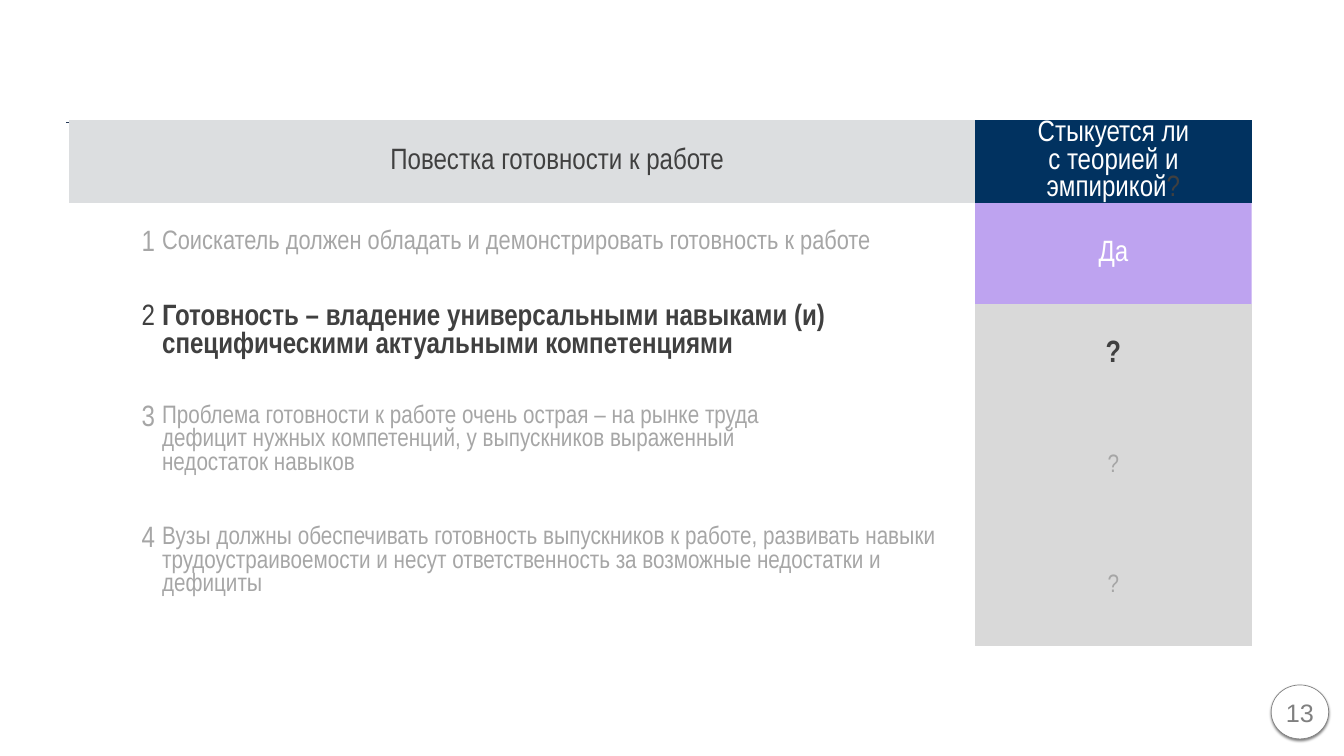
"""Build the agenda slide comparing work-readiness claims with theory and evidence."""
import pptx
import pptx.dml.color
import pptx.enum.shapes
import pptx.enum.text
import pptx.oxml.ns
import pptx.util
from lxml import etree
from pptx.util import Cm

RGBColor = pptx.dml.color.RGBColor
ALIGN = pptx.enum.text.PP_ALIGN
ANCHOR = pptx.enum.text.MSO_ANCHOR
qn = pptx.oxml.ns.qn

WHITE = RGBColor(0xFF, 0xFF, 0xFF)
NAVY = RGBColor(0x01, 0x32, 0x60)
RULE = RGBColor(0x25, 0x39, 0x57)
SILVER = RGBColor(0xDC, 0xDE, 0xE0)
VERDICT_GREY = RGBColor(0xD9, 0xD9, 0xD9)
PURPLE = RGBColor(0x94, 0x67, 0xE6)
DARK = RGBColor(0x40, 0x40, 0x40)
MUTED = RGBColor(0xA6, 0xA6, 0xA6)
BADGE_GREY = RGBColor(0x80, 0x80, 0x80)

NO_STYLE = "{2D5ABB26-0587-4C30-8999-92F81FD0307C}"
COLUMN_WIDTHS = (4.52, 41.15, 13.94)
ROW_HEIGHTS = (4.19, 5.08, 5.08, 6.12, 6.05)

MUTED_CLAIM = {"size": 36, "color": MUTED}
CLAIMS = (
    ("Соискатель должен обладать и демонстрировать готовность к работе",
     {"size": 38, "color": MUTED}, "Да", {"color": WHITE}, PURPLE),
    ("Готовность – владение универсальными навыками (и) специфическими актуальными компетенциями",
     {"color": DARK, "bold": True}, "?", {"size": 44, "color": DARK, "bold": True}, VERDICT_GREY),
    ("Проблема готовности к работе очень острая – на рынке труда \n"
     "дефицит нужных компетенций, у выпускников выраженный \nнедостаток навыков",
     MUTED_CLAIM, "?", MUTED_CLAIM, VERDICT_GREY),
    ("Вузы должны обеспечивать готовность выпускников к работе, развивать навыки "
     "трудоустраивоемости и несут ответственность за возможные недостатки и дефициты",
     MUTED_CLAIM, "?", MUTED_CLAIM, VERDICT_GREY),
)


def write(paragraph, text, *, size=42, color=DARK, bold=False, font="Arial Narrow",
          align=ALIGN.LEFT):
    """Append formatted text to a paragraph, breaking lines at newlines."""
    paragraph.alignment = align
    paragraph.line_spacing = 1.0
    for index, line in enumerate(text.split("\n")):
        if index:
            paragraph.add_line_break()
        run = paragraph.add_run()
        run.text = line
        run.font.name = font
        run.font.size = pptx.util.Pt(size)
        run.font.bold = bold
        run.font.color.rgb = color


def prepare_cell(cell, fill=None, top=0, anchor=ANCHOR.TOP):
    """Set a cell's insets, anchor and fill, and return its first paragraph."""
    cell.margin_left = cell.margin_right = Cm(0.18)
    cell.margin_top, cell.margin_bottom = Cm(top), 0
    cell.vertical_anchor = anchor
    if fill is None:
        cell.fill.background()
    else:
        cell.fill.solid()
        cell.fill.fore_color.rgb = fill
    return cell.text_frame.paragraphs[0]


def set_alpha(cell, percent):
    """Make a cell's solid fill partly transparent."""
    color = cell._tc.tcPr.find(qn("a:solidFill"))[0]
    etree.SubElement(color, qn("a:alpha"), val=str(percent * 1000))


def add_rule(slide):
    """Draw the thin rule behind the table header."""
    rule = slide.shapes.add_connector(
        pptx.enum.shapes.MSO_CONNECTOR.STRAIGHT, Cm(3.33), Cm(6.15), Cm(63.07), Cm(6.15))
    rule.line.color.rgb = RULE
    rule.line.width = pptx.util.Pt(1)
    etree.SubElement(rule._element.spPr, qn("a:effectLst"))


def fill_header(table):
    """Fill the header row."""
    table.cell(0, 0).merge(table.cell(0, 1))
    agenda = prepare_cell(table.cell(0, 0), SILVER, anchor=ANCHOR.MIDDLE)
    write(agenda, "Повестка готовности к работе ", align=ALIGN.CENTER)
    properties = agenda._p.get_or_add_pPr()
    properties.set("marL", str(Cm(4.11)))
    properties.set("indent", str(Cm(-0.23)))

    question_cell = table.cell(0, 2)
    question = prepare_cell(question_cell, NAVY, anchor=ANCHOR.MIDDLE)
    write(question, "Стыкуется ли", color=WHITE, align=ALIGN.CENTER)
    ending = question_cell.text_frame.add_paragraph()
    write(ending, "с теорией и эмпирикой", color=WHITE, align=ALIGN.CENTER)
    write(ending, "?", align=ALIGN.CENTER)


def add_agenda(slide):
    """Add the table of claims and verdicts."""
    table = slide.shapes.add_table(
        len(ROW_HEIGHTS), len(COLUMN_WIDTHS), Cm(3.47), Cm(6.05),
        Cm(sum(COLUMN_WIDTHS)), Cm(sum(ROW_HEIGHTS))).table
    table.first_row = table.horz_banding = False
    table._tbl.tblPr.find(qn("a:tableStyleId")).text = NO_STYLE
    for column, width in zip(table.columns, COLUMN_WIDTHS):
        column.width = Cm(width)
    for row, height in zip(table.rows, ROW_HEIGHTS):
        row.height = Cm(height)

    fill_header(table)
    for number, (claim, claim_format, verdict, verdict_format, fill) in enumerate(CLAIMS, 1):
        top = 1.37 if number == 1 else 0
        write(prepare_cell(table.cell(number, 0), top=top), str(number),
              color=claim_format["color"], align=ALIGN.RIGHT)
        write(prepare_cell(table.cell(number, 1), top=top), claim, **claim_format)
        write(prepare_cell(table.cell(number, 2), fill, anchor=ANCHOR.MIDDLE), verdict,
              align=ALIGN.CENTER, **verdict_format)
    set_alpha(table.cell(1, 2), 60)


def add_page_badge(slide, number):
    """Add the round page number with its soft shadow."""
    badge = slide.shapes.add_shape(
        pptx.enum.shapes.MSO_SHAPE.OVAL, Cm(64.06), Cm(34.52), Cm(2.9), Cm(2.72))
    badge.fill.solid()
    badge.fill.fore_color.rgb = WHITE
    badge.line.color.rgb = BADGE_GREY
    badge.line.width = pptx.util.Pt(1)
    badge.shadow.inherit = False
    effects = badge._element.spPr.find(qn("a:effectLst"))
    shadow = etree.SubElement(
        effects, qn("a:outerShdw"), blurRad=str(pptx.util.Pt(4)),
        dist=str(pptx.util.Pt(2)), dir="5400000", rotWithShape="0")
    shade = etree.SubElement(shadow, qn("a:srgbClr"), val="000000")
    etree.SubElement(shade, qn("a:alpha"), val="50000")

    frame = badge.text_frame
    frame.word_wrap = False
    frame.vertical_anchor = ANCHOR.MIDDLE
    frame.margin_left = frame.margin_right = Cm(0.2)
    frame.margin_top = frame.margin_bottom = Cm(0.2)
    write(frame.paragraphs[0], str(number), size=36, color=BADGE_GREY, font="Arial",
          align=ALIGN.CENTER)


def main():
    """Build and save the slide."""
    deck = pptx.Presentation()
    deck.slide_width, deck.slide_height = Cm(67.73), Cm(38.1)
    slide = deck.slides.add_slide(deck.slide_layouts[6])
    add_rule(slide)
    add_agenda(slide)
    add_page_badge(slide, 13)
    deck.save("out.pptx")


if __name__ == "__main__":
    main()
